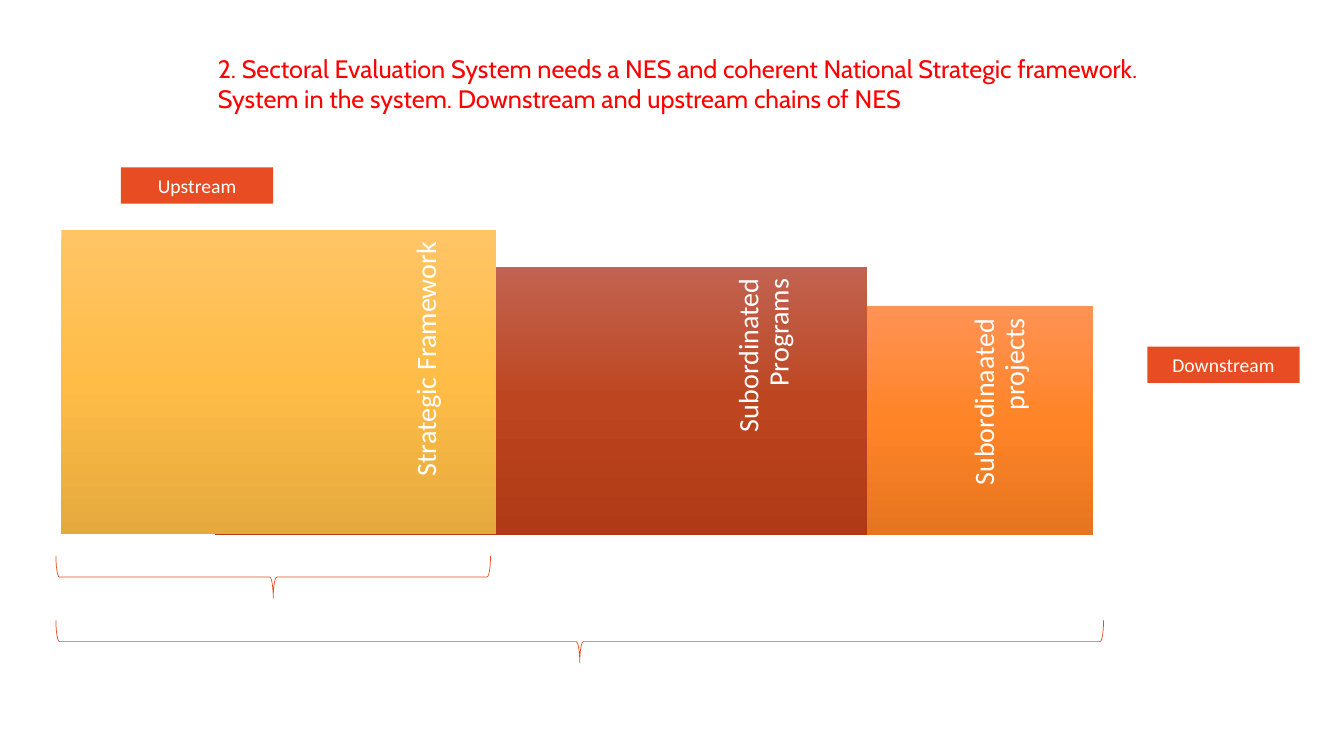
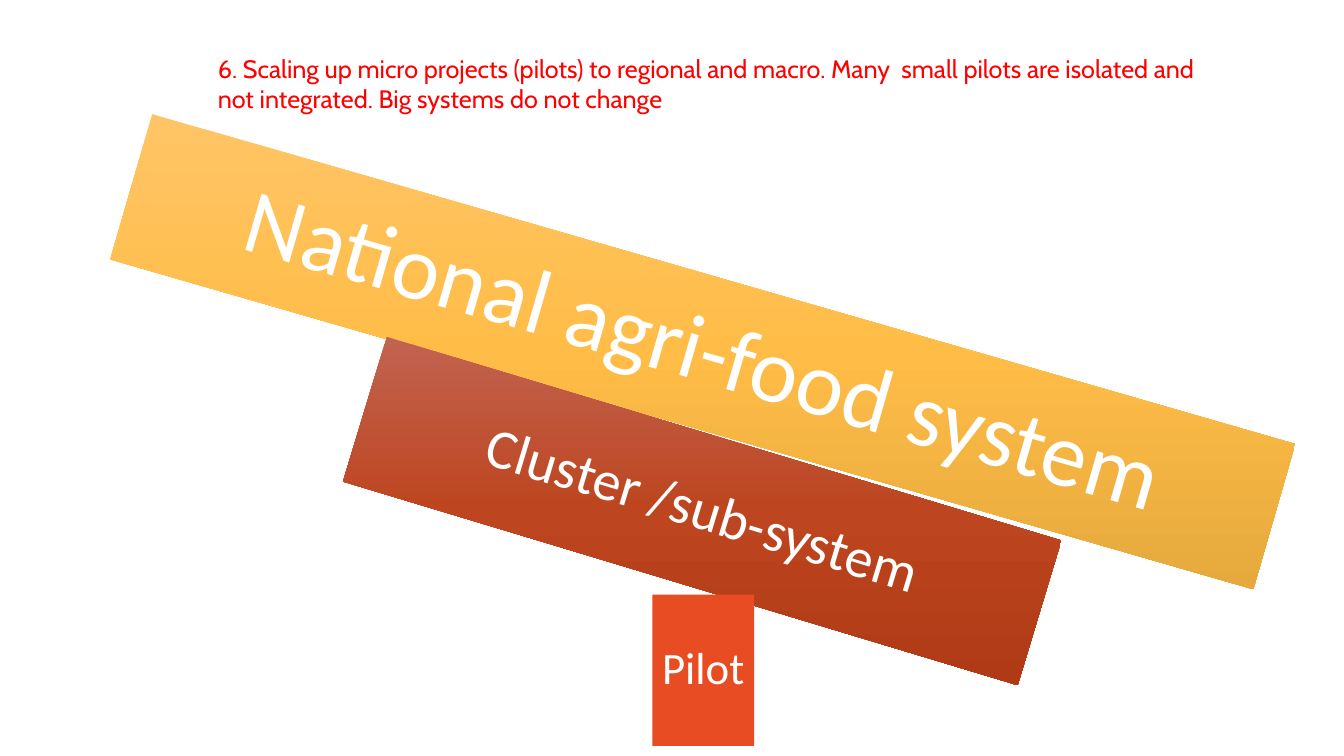
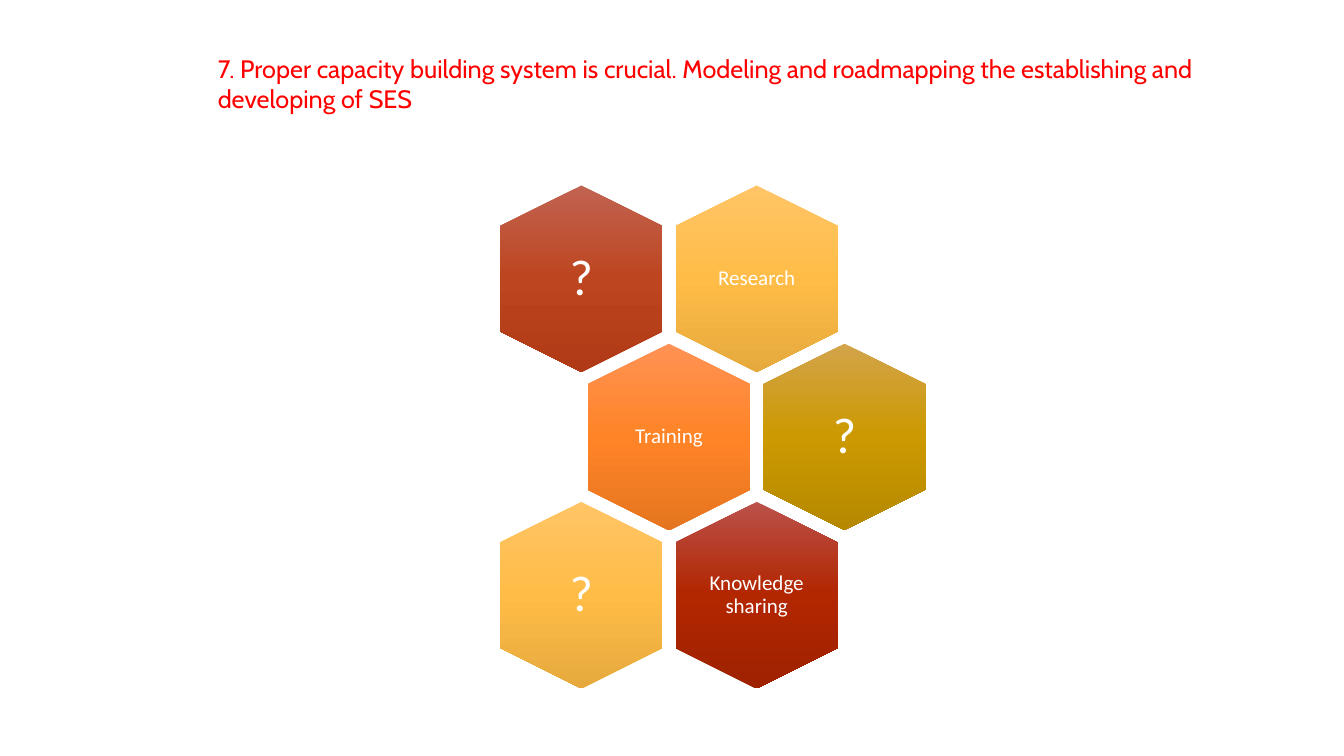
"""Build three slides on evaluation systems: chains, scaling up and capacity building."""
import dataclasses

import lxml.etree
import pptx
import pptx.dml.color
import pptx.enum.shapes
import pptx.enum.text
import pptx.oxml
import pptx.oxml.ns
import pptx.util

Inches = pptx.util.Inches
Preset = pptx.enum.shapes.MSO_SHAPE
Align = pptx.enum.text.PP_ALIGN


@dataclasses.dataclass(frozen=True)
class Theme:
    title_font: str = "Cabin"
    body_font: str = "Calibri"
    title_color: str = "FF0000"
    text_color: str = "FFFFFF"
    accent: str = "E84C22"
    amber: tuple = ("FFC466", "FFBD47", "E5A93D")
    brick: tuple = ("C16351", "BD451F", "AF3A15")
    orange: tuple = ("FF9254", "FF8427", "E57520")
    gold: tuple = ("D3A44B", "CC9900", "B58800")
    crimson: tuple = ("BB514B", "B22600", "9E2200")
    title_size: int = 18
    tag_size: int = 14
    chain_size: int = 20
    national_size: int = 65
    cluster_size: int = 40
    pilot_size: int = 32
    topic_size: int = 15
    question_size: int = 36


theme = Theme()


def add_block(page, preset, at, fill, rotation=0):
    block = page.shapes.add_shape(preset, *[Inches(length) for length in at])
    block.rotation = rotation
    block.shadow.inherit = False
    block.line.fill.background()
    if isinstance(fill, str):
        block.fill.solid()
        block.fill.fore_color.rgb = pptx.dml.color.RGBColor.from_string(fill)
    elif fill:
        namespace = pptx.oxml.ns.nsdecls("a")
        stops = "".join(
            f'<a:gs pos="{index * 50000}"><a:srgbClr val="{color}"/></a:gs>'
            for index, color in enumerate(fill))
        gradient = pptx.oxml.parse_xml(
            f'<a:gradFill {namespace} rotWithShape="0"><a:gsLst>{stops}</a:gsLst>'
            '<a:lin ang="5400000" scaled="0"/></a:gradFill>')
        block.fill.background()
        properties = block._element.spPr
        properties.replace(properties.find(pptx.oxml.ns.qn("a:noFill")), gradient)
    else:
        block.fill.background()
    return block


def write_text(box, text, size, insets=(0.1, 0.05, 0.1, 0.05), align=Align.CENTER,
               spacing=0.9, font=theme.body_font, color=theme.text_color):
    frame = box.text_frame
    frame.text = text
    frame.word_wrap = True
    frame.auto_size = pptx.enum.text.MSO_AUTO_SIZE.NONE
    frame.vertical_anchor = pptx.enum.text.MSO_ANCHOR.MIDDLE
    (frame.margin_left, frame.margin_top,
     frame.margin_right, frame.margin_bottom) = [Inches(inset) for inset in insets]
    para = frame.paragraphs[0]
    para.alignment = align
    para.line_spacing = spacing
    for span in para.runs:
        span.font.name = font
        span.font.size = pptx.util.Pt(size)
        span.font.color.rgb = pptx.dml.color.RGBColor.from_string(color)


deck = pptx.Presentation()
deck.slide_width = Inches(13.33)
deck.slide_height = Inches(7.5)
titles = [
    "2. Sectoral Evaluation System needs a NES and coherent National Strategic framework. "
    "System in the system. Downstream and upstream chains of NES",
    "6. Scaling up micro projects (pilots) to regional and macro. Many  small pilots are "
    "isolated and not integrated. Big systems do not change",
    "7. Proper capacity building system is crucial. Modeling and roadmapping the "
    "establishing and developing of SES",
]
pages = []
for title_text in titles:
    page = deck.slides.add_slide(deck.slide_layouts[5])
    title = page.shapes.title
    title.left, title.top = Inches(2.06), Inches(0.38)
    title.width, title.height = Inches(10.07), Inches(0.89)
    write_text(title, title_text, theme.title_size, align=Align.LEFT, spacing=1.0,
               font=theme.title_font, color=theme.title_color)
    pages.append(page)
chain_page, scaling_page, capacity_page = pages

for text, left, top in [("Upstream", 1.2, 1.66), ("Downstream", 11.38, 3.44)]:
    tag = add_block(chain_page, Preset.RECTANGLE, (left, top, 1.51, 0.36), theme.accent)
    write_text(tag, text, theme.tag_size, spacing=1.0)

chain_links = [
    ("Subordinaated projects", theme.orange, (4.97, 3.04, 5.87, 2.27), (8.91, 3.3, 2.05, 1.53)),
    ("Subordinated Programs", theme.brick, (2.13, 2.65, 6.47, 2.66), (6.4, 3, 2.39, 1.68)),
    ("Strategic Framework", theme.amber, (0.61, 2.28, 4.31, 3.02), (2.89, 3.08, 2.72, 1.12)),
]
for text, fill, link_at, label_at in chain_links:
    add_block(chain_page, Preset.RECTANGLE, link_at, fill)
    label = chain_page.shapes.add_textbox(*[Inches(length) for length in label_at])
    label.rotation = 270
    write_text(label, text, theme.chain_size, (0.08, 0, 0.12, 0.03), Align.RIGHT)

for brace_at in [(2.5, 3.57, 0.42, 4.31), (5.54, 1.17, 0.42, 10.39)]:
    brace = add_block(chain_page, Preset.LEFT_BRACE, brace_at, None, 270)
    brace.line.color.rgb = pptx.dml.color.RGBColor.from_string(theme.accent)
    brace.line.width = pptx.util.Pt(0.5)

levels = [
    ("National agri-food system", theme.amber, (1.07, 2.74, 11.8, 1.5), 16.1,
     theme.national_size, 0.18),
    ("Cluster /sub-system", theme.brick, (3.47, 4.32, 6.99, 1.5), 16.8,
     theme.cluster_size, 0.11),
    ("Pilot", theme.accent, (6.47, 5.9, 1.01, 1.5), 0, theme.pilot_size, 0.09),
]
for text, fill, level_at, rotation, size, inset in levels:
    level = add_block(scaling_page, Preset.RECTANGLE, level_at, fill, rotation)
    write_text(level, text, size, (inset,) * 4)

hexagon_rows = [
    [("?", theme.brick), ("Research", theme.amber)],
    [("Training", theme.orange), ("?", theme.gold)],
    [("?", theme.amber), ("Knowledge sharing", theme.crimson)],
]
hexagon_width, hexagon_height = 1.85, 1.61
label_width, label_height = 1.11, 1.28
column_step, row_step = 1.74, 1.57
for row, cells in enumerate(hexagon_rows):
    for column, (text, fill) in enumerate(cells):
        left = 4.84 + column_step * (column + row % 2 / 2)
        top = 1.96 + row_step * row
        hexagon = add_block(capacity_page, Preset.HEXAGON,
                            (left, top, hexagon_width, hexagon_height), fill, 90)
        hexagon.adjustments[0] = 0.25
        label = capacity_page.shapes.add_textbox(
            Inches(left + (hexagon_width - label_width) / 2),
            Inches(top + (hexagon_height - label_height) / 2),
            Inches(label_width), Inches(label_height))
        if text == "?":
            write_text(label, text, theme.question_size, (0,) * 4)
        else:
            write_text(label, text, theme.topic_size, (0.06,) * 4)

deck.save("out.pptx")
